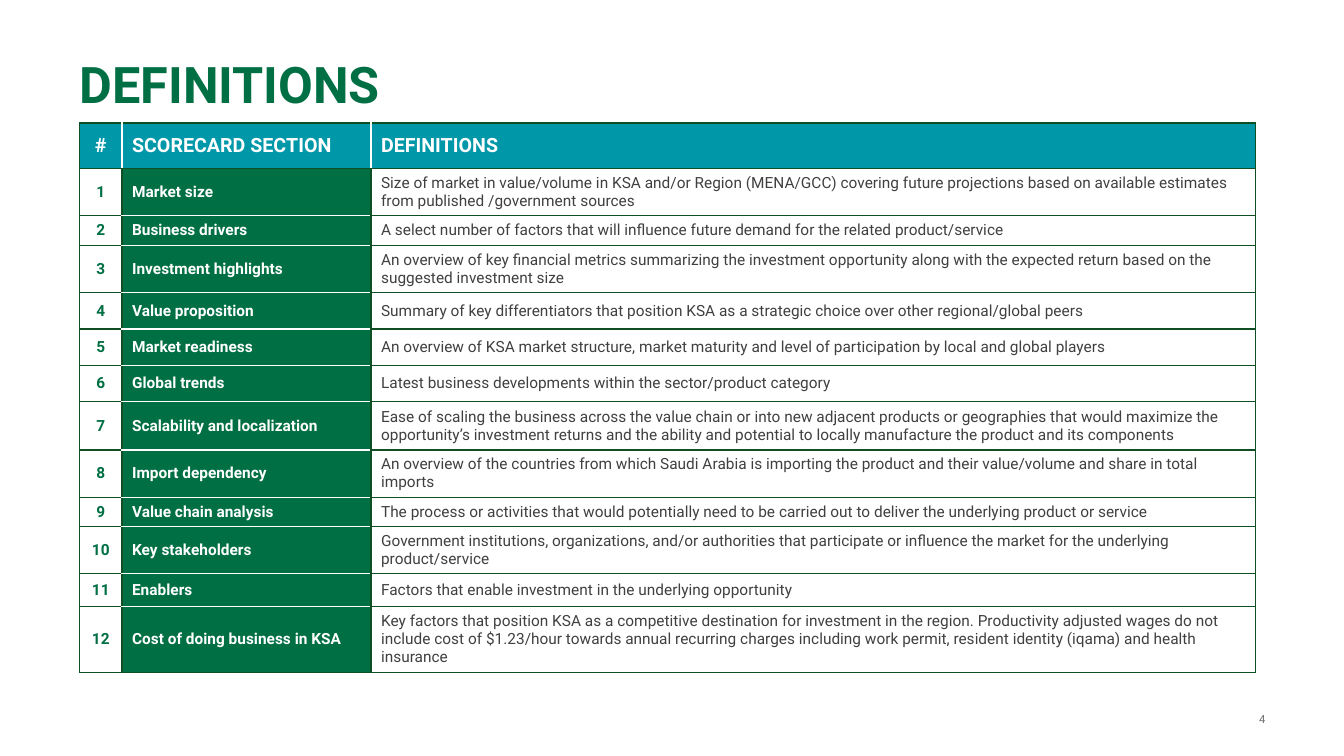
from dataclasses import dataclass

from lxml import etree
from pptx import Presentation
from pptx import util as u
from pptx.dml import color
from pptx.enum import text
from pptx.oxml import ns


@dataclass(frozen=True)
class Theme:
    font: str = "Roboto"
    green: str = "006F44"
    teal: str = "0097A9"
    border: str = "104E23"
    white: str = "FFFFFF"
    body: str = "404040"
    muted: str = "6E6E6E"
    title_size: int = 36
    header_size: int = 14
    body_size: int = 11
    number_size: int = 8
    border_width: int = 1


THEME = Theme()
LEFT, CENTER, RIGHT = text.PP_ALIGN.LEFT, text.PP_ALIGN.CENTER, text.PP_ALIGN.RIGHT

COLUMN_WIDTHS = [0.42, 2.47, 8.77]
HEADER = ("#", "SCORECARD SECTION", "DEFINITIONS")
HEADER_HEIGHT = 0.45

# Row height, section, definition
DEFINITIONS = [
    (0.46, "Market size",
     "Size of market in value/volume in KSA and/or Region (MENA/GCC) covering future "
     "projections based on available estimates from published /government sources"),
    (0.3, "Business drivers",
     "A select number of factors that will influence future demand for the related "
     "product/service"),
    (0.46, "Investment highlights",
     "An overview of key financial metrics summarizing the investment opportunity along "
     "with the expected return based on the suggested investment size"),
    (0.36, "Value proposition",
     "Summary of key differentiators that position KSA as a strategic choice over other "
     "regional/global peers"),
    (0.36, "Market readiness",
     "An overview of KSA market structure, market maturity and level of participation by "
     "local and global players"),
    (0.36, "Global trends",
     "Latest business developments within the sector/product category"),
    (0.48, "Scalability and localization",
     "Ease of scaling the business across the value chain or into new adjacent products or "
     "geographies that would maximize the opportunity’s investment returns and the ability "
     "and potential to locally manufacture the product and its components"),
    (0.46, "Import dependency",
     "An overview of the countries from which Saudi Arabia is importing the product and "
     "their value/volume and share in total imports"),
    (0.29, "Value chain analysis",
     "The process or activities that would potentially need to be carried out to deliver "
     "the underlying product or service"),
    (0.46, "Key stakeholders",
     "Government institutions, organizations, and/or authorities that participate or "
     "influence the market for the underlying product/service"),
    (0.33, "Enablers",
     "Factors that enable investment in the underlying opportunity"),
    (0.63, "Cost of doing business in KSA",
     "Key factors that position KSA as a competitive destination for investment in the "
     "region. Productivity adjusted wages do not include cost of $1.23/hour towards annual "
     "recurring charges including work permit, resident identity (iqama) and health "
     "insurance"),
]


def write_text(frame, content, *, size, ink, bold=False, align=LEFT,
               line_spacing=None, space_after=None):
    frame.word_wrap = True
    paragraph = frame.paragraphs[0]
    paragraph.alignment = align
    if line_spacing is not None:
        paragraph.line_spacing = line_spacing
    if space_after is not None:
        paragraph.space_after = u.Pt(space_after)
    run = paragraph.add_run()
    run.text = content
    run.font.name = THEME.font
    run.font.size = u.Pt(size)
    run.font.bold = bold
    run.font.color.rgb = color.RGBColor.from_string(ink)


def add_text(slide, box, content, *, anchor=text.MSO_ANCHOR.TOP, **style):
    shape = slide.shapes.add_textbox(*map(u.Inches, box))
    frame = shape.text_frame
    frame.margin_left = frame.margin_top = frame.margin_right = frame.margin_bottom = 0
    frame.vertical_anchor = anchor
    write_text(frame, content, **style)


def set_borders(cell, left, right, top, bottom):
    properties = cell._tc.get_or_add_tcPr()
    sides = zip(("a:lnL", "a:lnR", "a:lnT", "a:lnB"), (left, right, top, bottom))
    for index, (tag, ink) in enumerate(sides):
        line = etree.Element(ns.qn(tag), w=str(u.Pt(THEME.border_width)))
        fill = etree.SubElement(line, ns.qn("a:solidFill"))
        etree.SubElement(fill, ns.qn("a:srgbClr"), val=ink)
        properties.insert(index, line)


def format_cell(cell, content, fill, borders, **style):
    cell.vertical_anchor = text.MSO_ANCHOR.MIDDLE
    cell.margin_left = cell.margin_right = u.Inches(0.1)
    cell.margin_top = cell.margin_bottom = u.Inches(0.05)
    cell.fill.solid()
    cell.fill.fore_color.rgb = color.RGBColor.from_string(fill)
    set_borders(cell, *borders)
    write_text(cell.text_frame, content, **style)


def add_definitions_table(slide, left, top):
    heights = [HEADER_HEIGHT] + [height for height, _, _ in DEFINITIONS]
    frame = slide.shapes.add_table(
        len(heights), len(COLUMN_WIDTHS), u.Inches(left), u.Inches(top),
        u.Inches(sum(COLUMN_WIDTHS)), u.Inches(sum(heights)))
    table = frame.table
    table.first_row = table.horz_banding = False
    for column, width in zip(table.columns, COLUMN_WIDTHS):
        column.width = u.Inches(width)
    for row, height in zip(table.rows, heights):
        row.height = u.Inches(height)

    # Header row: white lines between the columns only
    dark, white = THEME.border, THEME.white
    last_column = len(HEADER) - 1
    for index, label in enumerate(HEADER):
        borders = (white if index else dark, white if index < last_column else dark, dark, dark)
        format_cell(table.cell(0, index), label, THEME.teal, borders,
                    size=THEME.header_size, ink=white, bold=True,
                    align=LEFT if index else CENTER)

    # Body rows: white lines between the section cells only
    body = {"size": THEME.body_size, "space_after": 6}
    for number, (_, section, definition) in enumerate(DEFINITIONS, start=1):
        number_cell, section_cell, definition_cell = table.rows[number].cells
        section_borders = (dark, dark, white if number > 1 else dark,
                           white if number < len(DEFINITIONS) else dark)
        format_cell(number_cell, str(number), white, (dark,) * 4,
                    ink=THEME.green, bold=True, align=CENTER, **body)
        format_cell(section_cell, section, THEME.green, section_borders,
                    ink=white, bold=True, **body)
        format_cell(definition_cell, definition, white, (dark,) * 4,
                    ink=THEME.body, **body)


def build_definitions_slide(presentation):
    slide = presentation.slides.add_slide(presentation.slide_layouts[6])
    add_text(slide, (0.79, 0.59, 11.76, 0.79), "DEFINITIONS",
             size=THEME.title_size, ink=THEME.green, bold=True, line_spacing=0.9)
    add_text(slide, (10.2, 6.93, 2.35, 0.4), "4", anchor=text.MSO_ANCHOR.MIDDLE,
             size=THEME.number_size, ink=THEME.muted, align=RIGHT)
    add_definitions_table(slide, 0.79, 1.22)


def main():
    presentation = Presentation()
    presentation.slide_width = u.Inches(13.33)
    presentation.slide_height = u.Inches(7.5)
    build_definitions_slide(presentation)
    presentation.save("out.pptx")


if __name__ == "__main__":
    main()
